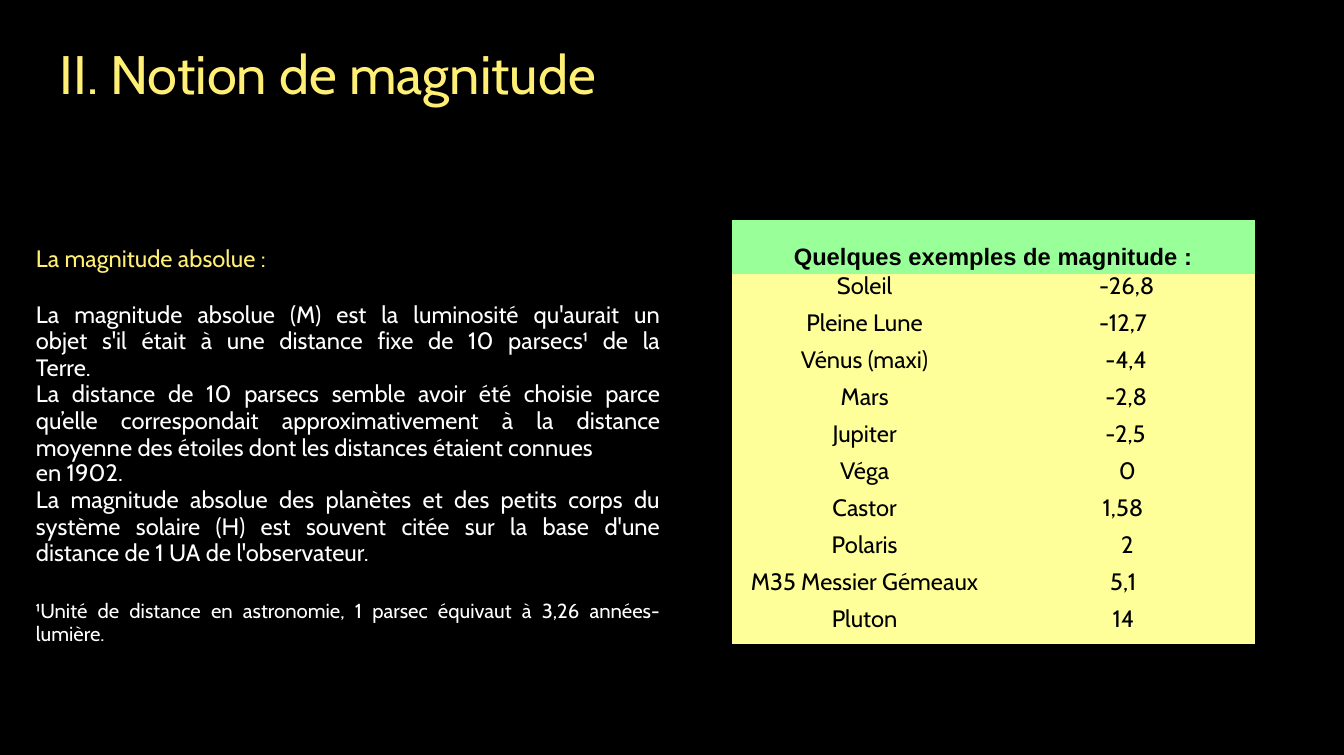
from copy import deepcopy
from dataclasses import dataclass, field

from pptx import Presentation
from pptx.dml.color import RGBColor
from pptx.enum.text import MSO_ANCHOR as Anchor, MSO_AUTO_SIZE as AutoSize, PP_ALIGN as Align
from pptx.oxml import parse_xml
from pptx.oxml.ns import nsdecls, qn
from pptx.util import Cm, Pt

BLACK = RGBColor(0x00, 0x00, 0x00)
WHITE = RGBColor(0xFF, 0xFF, 0xFF)
YELLOW = RGBColor(0xFF, 0xF0, 0x75)
GREEN = RGBColor(0x99, 0xFF, 0x99)
CREAM = RGBColor(0xFF, 0xFF, 0x99)
NO_GRID_STYLE = "{2D5ABB26-0587-4C30-8999-92F81FD0307C}"


@dataclass
class Para:
    text: str
    color: RGBColor = WHITE
    size: float = 14
    align: Align = Align.JUSTIFY
    font: str = "Cabin"
    bold: bool = False
    layout: dict = field(default_factory=dict)


@dataclass
class Star:
    name: str
    magnitude: str
    indent: float | None = None  # centimetres; None centres the value


TITLE = Para("II. Notion de magnitude", YELLOW, 32, Align.LEFT)
BODY = [
    Para("La magnitude absolue :", YELLOW),
    Para("La magnitude absolue (M) est la luminosité qu'aurait un\n"
         "objet s'il était à une distance fixe de 10 parsecs¹ de la\n"
         "Terre.",
         layout={"line_spacing": Pt(15.7), "space_before": Pt(17.2)}),
    Para("La distance de 10 parsecs semble avoir été choisie parce\n"
         "qu’elle correspondait approximativement à la distance\n"
         "moyenne des étoiles dont les distances étaient connues",
         layout={"line_spacing": Pt(15.7)}),
    Para("en 1902.", layout={"line_spacing": Pt(14.9)}),
    Para("La magnitude absolue des planètes et des petits corps du\n"
         "système solaire (H) est souvent citée sur la base d'une\n"
         "distance de 1 UA de l'observateur.",
         layout={"line_spacing": 0.94, "space_before": Pt(0.5)}),
    Para("¹Unité de distance en astronomie, 1 parsec équivaut à 3,26 années- lumière.",
         size=12, layout={"line_spacing": Pt(13.9), "space_before": Pt(18.6)}),
]
HEADING = Para("Quelques exemples de magnitude :", BLACK, 14, Align.CENTER, "Arial", True)
STARS = [
    Star("Soleil", "-26,8", 1.17),
    Star("Pleine Lune", "-12,7", 1.17),
    Star("Vénus (maxi)", "-4,4", 1.3),
    Star("Mars", "-2,8", 1.3),
    Star("Jupiter", "-2,5", 1.3),
    Star("Véga", "0"),
    Star("Castor", "1,58", 1.24),
    Star("Polaris", "2"),
    Star("M35 Messier Gémeaux", "5,1", 1.4),
    Star("Pluton", "14", 1.45),
]
COLUMN_WIDTHS = [6.5, 4.42]
ROW_HEIGHTS = [1.14, 0.66] + [0.77] * 8 + [0.89]


def set_margins(target, left: float = 0, top: float = 0, right: float = 0) -> None:
    margins = {"left": left, "top": top, "right": right, "bottom": 0}
    for side, length in margins.items():
        setattr(target, f"margin_{side}", Cm(length))


def write(frame, paras: list[Para]) -> None:
    for index, item in enumerate(paras):
        para = frame.add_paragraph() if index else frame.paragraphs[0]
        para.alignment = item.align
        for name, value in item.layout.items():
            setattr(para, name, value)
        for number, line in enumerate(item.text.split("\n")):
            if number:
                para.add_line_break()
            span = para.add_run()
            span.text = line
            formats = {"name": item.font, "size": Pt(item.size), "bold": item.bold}
            for name, value in formats.items():
                setattr(span.font, name, value)
            span.font.color.rgb = item.color
            if number:  # the break takes the format of its line
                span._r.getprevious().append(deepcopy(span._r.rPr))


def fill_box(box, paras: list[Para], left: float, top: float) -> None:
    frame = box.text_frame
    formats = {"word_wrap": True, "auto_size": AutoSize.NONE, "vertical_anchor": Anchor.TOP}
    for name, value in formats.items():
        setattr(frame, name, value)
    set_margins(frame, left, top)
    write(frame, paras)


def fill_cell(cell, para: Para, color: RGBColor, edges: str,
              left: float = 0, top: float = 0, right: float = 0) -> None:
    cell.fill.solid()
    cell.fill.fore_color.rgb = color
    set_margins(cell, left, top, right)
    write(cell.text_frame, [para])
    properties = cell._tc.get_or_add_tcPr()
    for place, edge in enumerate(edges):
        line = parse_xml(f'<a:ln{edge} {nsdecls("a")} w="6350"><a:solidFill>'
                         f'<a:srgbClr val="{BLACK}"/></a:solidFill></a:ln{edge}>')
        properties.insert(place, line)


def add_magnitude_table(page) -> None:
    frame = page.shapes.add_table(len(ROW_HEIGHTS), len(COLUMN_WIDTHS), Cm(15.24), Cm(4.57),
                                  Cm(sum(COLUMN_WIDTHS)), Cm(sum(ROW_HEIGHTS)))
    table = frame.table
    table.horz_banding = False
    table._tbl.tblPr.find(qn("a:tableStyleId")).text = NO_GRID_STYLE
    for column, width in zip(table.columns, COLUMN_WIDTHS):
        column.width = Cm(width)
    for row, height in zip(table.rows, ROW_HEIGHTS):
        row.height = Cm(height)

    # Heading across both columns
    table.cell(0, 0).merge(table.cell(0, 1))
    fill_cell(table.cell(0, 0), HEADING, GREEN, "LRT", top=0.51)

    # One row for each object
    for number, star in enumerate(STARS, start=1):
        first = number == 1
        bottom = "B" if number == len(STARS) else ""
        layout = {"line_spacing": Pt(15.5)} if first else {}
        top = 0 if first else 0.07
        centred = star.indent is None
        name = Para(star.name, BLACK, align=Align.CENTER, layout=layout)
        value = Para(star.magnitude, BLACK, align=Align.CENTER if centred else Align.LEFT,
                     layout=layout)
        fill_cell(table.cell(number, 0), name, CREAM, "L" + bottom, top=top, right=0.94)
        fill_cell(table.cell(number, 1), value, CREAM, "R" + bottom,
                  left=star.indent or 0, top=top, right=0.91 if centred else 0)


def main() -> None:
    deck = Presentation()
    deck.slide_width, deck.slide_height = Pt(794), Pt(446)
    page = deck.slides.add_slide(deck.slide_layouts[5])
    page.background.fill.solid()
    page.background.fill.fore_color.rgb = BLACK

    # Title
    title = page.shapes.title
    places = {"left": 0.71, "top": 0.48, "width": 25.37, "height": 3.35}
    for name, length in places.items():
        setattr(title, name, Cm(length))
    fill_box(title, [TITLE], left=0.53, top=0.36)

    # Definition and footnote
    box = page.shapes.add_textbox(Cm(0.71), Cm(5.05), Cm(13.06), Cm(8.36))
    fill_box(box, BODY, left=0.04, top=0.03)

    add_magnitude_table(page)
    deck.save("out.pptx")


if __name__ == "__main__":
    main()
